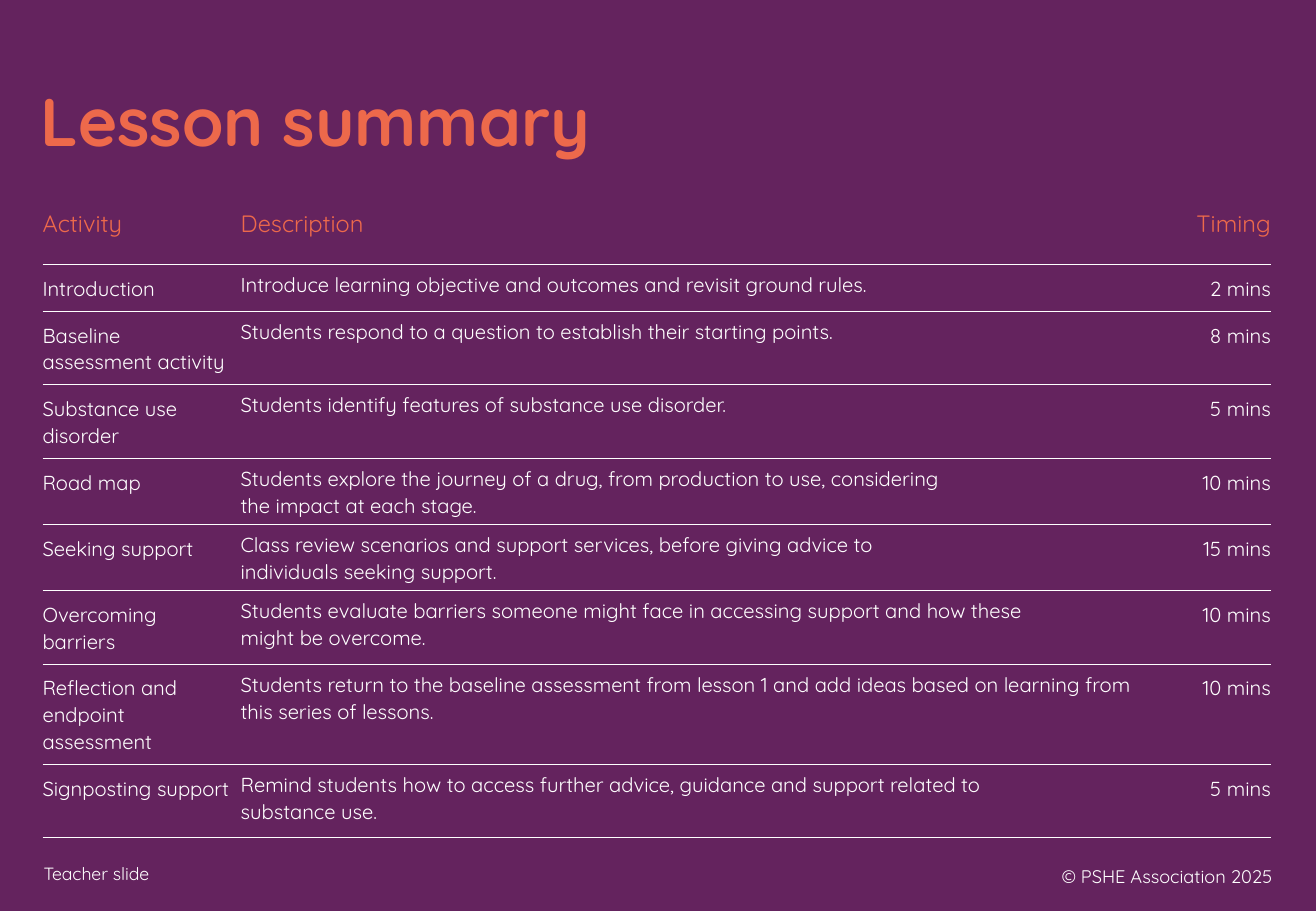
from dataclasses import dataclass

from lxml import etree
from pptx import Presentation
from pptx import util as u
from pptx.dml import color
from pptx.enum import text
from pptx.oxml import ns


# Colours and type sizes
@dataclass(frozen=True)
class Theme:
    font: str = "Quicksand"
    background: str = "64235E"
    accent: str = "ED694B"
    light: str = "FFFFFF"
    title: float = 40
    heading: float = 14
    body: float = 12
    label: float = 10.5
    copyright: float = 10.8
    rule: float = 0.5


THEME = Theme()
LEFT, RIGHT = text.PP_ALIGN.LEFT, text.PP_ALIGN.RIGHT
TOP, MIDDLE = text.MSO_ANCHOR.TOP, text.MSO_ANCHOR.MIDDLE
PLAIN_TABLE = "{2D5ABB26-0587-4C30-8999-92F81FD0307C}"

# Lesson plan: activity, description, timing
HEADINGS = ("Activity", "Description", "Timing")
ACTIVITIES = [
    ("Introduction",
     "Introduce learning objective and outcomes and revisit ground rules.", "2 mins"),
    ("Baseline assessment activity",
     "Students respond to a question to establish their starting points.", "8 mins"),
    ("Substance use disorder",
     "Students identify features of substance use disorder.", "5 mins"),
    ("Road map",
     "Students explore the journey of a drug, from production to use, considering\n"
     "the impact at each stage.", "10 mins"),
    ("Seeking support",
     "Class review scenarios and support services, before giving advice to\n"
     "individuals seeking support.", "15 mins"),
    ("Overcoming barriers",
     "Students evaluate barriers someone might face in accessing support and how these\n"
     "might be overcome.", "10 mins"),
    ("Reflection and endpoint assessment",
     "Students return to the baseline assessment from lesson 1 and add ideas "
     "based on learning from this series of lessons.", "10 mins"),
    ("Signposting support",
     "Remind students how to access further advice, guidance and support related to\n"
     "substance use.", "5 mins"),
]
COLUMN_WIDTHS = (117.4, 555.1, 55.4)
ROW_HEIGHTS = (46.1, 27.4, 43.2, 43.2, 38.9, 38.9, 43.2, 59, 43.2)

# Cell margins: left, top, right, bottom
HEADING_MARGINS = ((0, 5.8, 5.8, 5.8), (0, 5.8, 5.8, 5.8), (5.8, 5.8, 0, 5.8))
BODY_MARGINS = ((0, 5.8, 5.8, 5.8), (0, 3.6, 7.2, 3.6), (5.8, 5.8, 0, 5.8))


def set_all(target, values):
    for name, value in values.items():
        setattr(target, name, value)


def write(frame, words, size, shade, align=LEFT, bold=False, spacing=None):
    para = frame.paragraphs[0]
    para.text = words
    set_all(para, {"alignment": align, "line_spacing": spacing})
    for span in para.runs:
        set_all(span.font, {"name": THEME.font, "size": u.Pt(size), "bold": bold})
        span.font.color.rgb = color.RGBColor.from_string(shade)


def place(shape, left, top, width, height):
    set_all(shape, {"left": u.Pt(left), "top": u.Pt(top),
                    "width": u.Pt(width), "height": u.Pt(height)})


def add_title(page, words):
    title = page.shapes.title
    place(title, 16.6, 46.8, 590.4, 54.7)
    set_all(title.text_frame, {"vertical_anchor": MIDDLE, "word_wrap": True,
                               "auto_size": text.MSO_AUTO_SIZE.NONE})
    write(title.text_frame, words, THEME.title, THEME.accent, bold=True, spacing=0.9)


def add_footer(page, words, bounds, size, align, anchor):
    box = page.shapes.add_textbox(*map(u.Pt, bounds))
    set_all(box.text_frame, {"word_wrap": True, "vertical_anchor": anchor})
    write(box.text_frame, words, size, THEME.light, align)


def underline(cell):
    properties = cell._tc.get_or_add_tcPr()
    line = etree.Element(ns.qn("a:lnB"), w=str(u.Pt(THEME.rule)))
    fill = etree.SubElement(line, ns.qn("a:solidFill"))
    etree.SubElement(fill, ns.qn("a:srgbClr"), val=THEME.light)
    properties.insert(0, line)


def fill_row(table, index, words, margins, anchor, size, shade, spacing):
    for column, (entry, insets) in enumerate(zip(words, margins)):
        cell = table.cell(index, column)
        sides = ("margin_left", "margin_top", "margin_right", "margin_bottom")
        set_all(cell, dict(zip(sides, map(u.Pt, insets))))
        cell.vertical_anchor = anchor
        cell.fill.background()
        underline(cell)
        align = RIGHT if column == len(words) - 1 else LEFT
        write(cell.text_frame, entry, size, shade, align, spacing=u.Pt(spacing))


def add_plan(page):
    frame = page.shapes.add_table(
        len(ROW_HEIGHTS), len(COLUMN_WIDTHS), u.Pt(25.2), u.Pt(110.9),
        u.Pt(sum(COLUMN_WIDTHS)), u.Pt(sum(ROW_HEIGHTS)))
    table = frame.table
    set_all(table, {"first_row": False, "horz_banding": False})
    table._tbl.tblPr.find(ns.qn("a:tableStyleId")).text = PLAIN_TABLE
    for column, width in zip(table.columns, COLUMN_WIDTHS):
        column.width = u.Pt(width)
    for row, height in zip(table.rows, ROW_HEIGHTS):
        row.height = u.Pt(height)

    fill_row(table, 0, HEADINGS, HEADING_MARGINS, MIDDLE,
             THEME.heading, THEME.accent, 15)
    for index, activity in enumerate(ACTIVITIES, start=1):
        fill_row(table, index, activity, BODY_MARGINS, TOP,
                 THEME.body, THEME.light, 16)


def main():
    # Deck and background
    deck = Presentation()
    set_all(deck, {"slide_width": u.Pt(779.8), "slide_height": u.Pt(540)})
    page = deck.slides.add_slide(deck.slide_layouts[5])
    page.background.fill.solid()
    page.background.fill.fore_color.rgb = color.RGBColor.from_string(THEME.background)

    # Title and lesson plan
    add_title(page, "Lesson summary")
    add_plan(page)

    # Footer
    add_footer(page, "Teacher slide", (18.7, 507.6, 488.2, 20.9),
               THEME.label, LEFT, TOP)
    add_footer(page, "© PSHE Association 2025", (585.4, 504.7, 175.7, 28.8),
               THEME.copyright, RIGHT, MIDDLE)

    deck.save("out.pptx")


if __name__ == "__main__":
    main()
